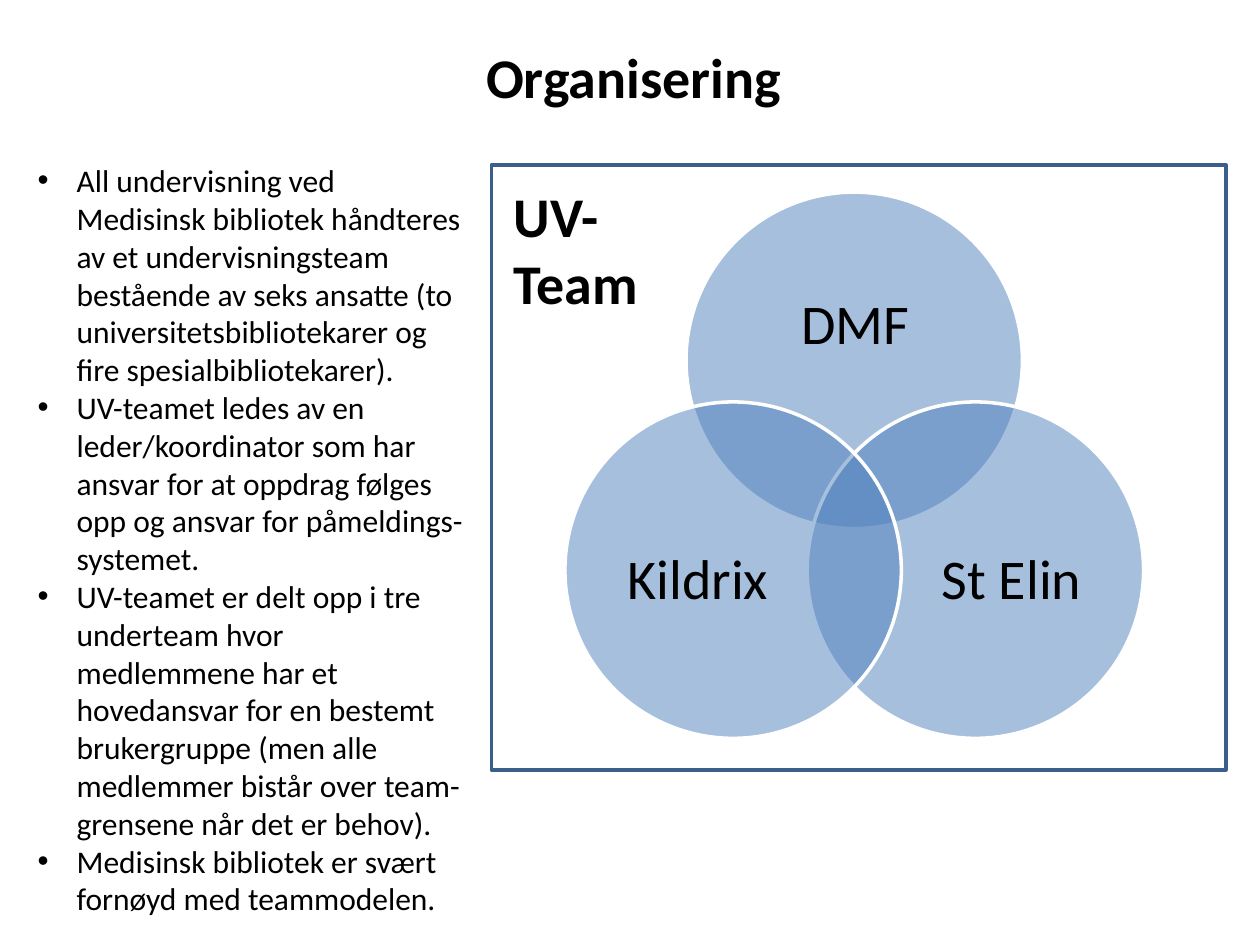
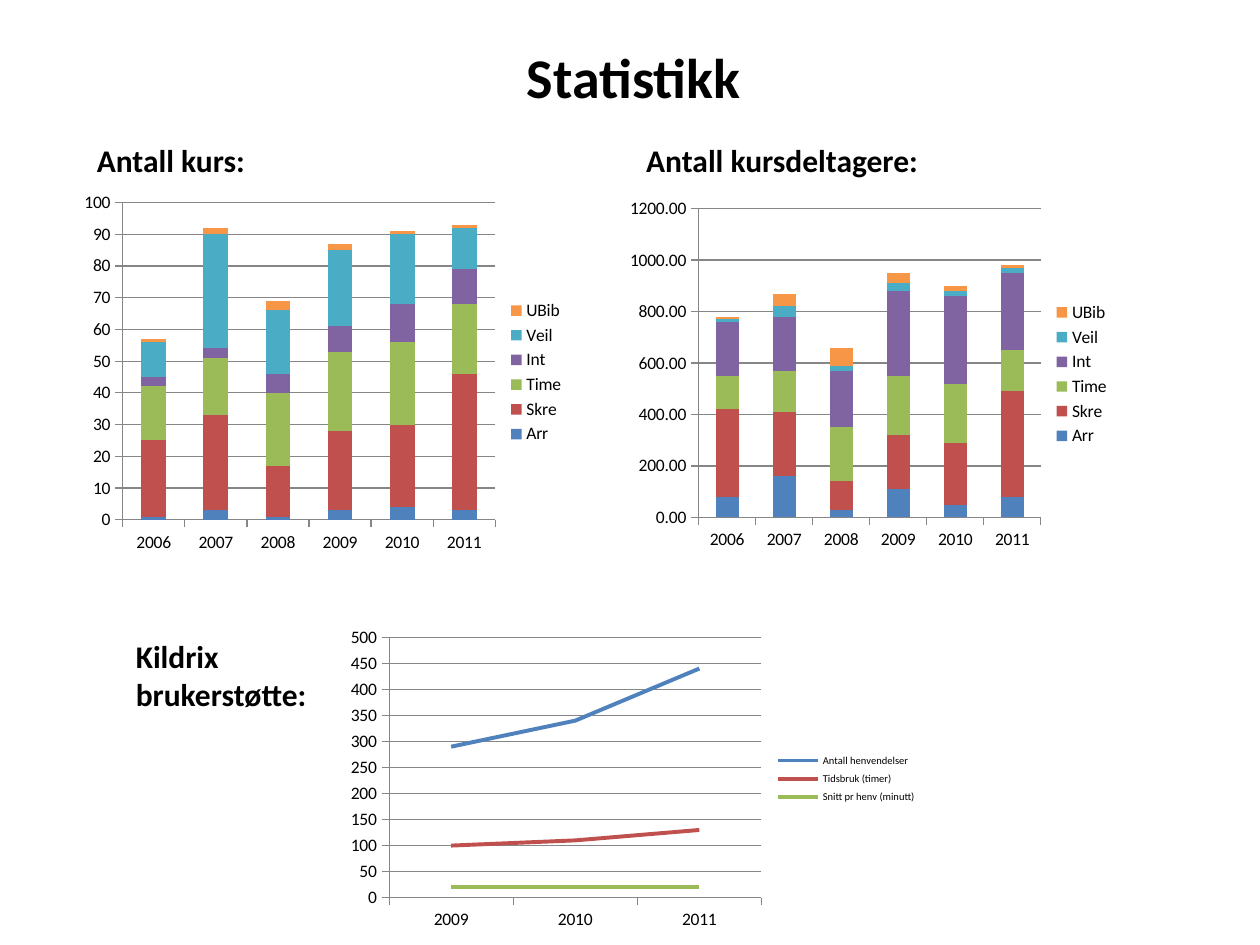
from math import cos, radians, sin

from lxml.etree import SubElement
from pptx import Presentation
from pptx.chart.data import CategoryChartData
from pptx.dml.color import RGBColor
from pptx.enum.chart import XL_CHART_TYPE, XL_LEGEND_POSITION, XL_TICK_MARK
from pptx.enum.shapes import MSO_SHAPE
from pptx.enum.text import MSO_ANCHOR, MSO_AUTO_SIZE, PP_ALIGN
from pptx.oxml.ns import qn
from pptx.util import Inches, Pt

COLORS = {
    "text": "000000",
    "white": "FFFFFF",
    "frame": "3A5F8C",
    "grid": "868686",
    "blue": "4F81BD",
    "red": "C0504D",
    "green": "9BBB59",
    "purple": "8064A2",
    "teal": "4BACC6",
    "orange": "F79646",
}
SERIES = ["blue", "red", "green", "purple", "teal", "orange"]
FONT = "Calibri"


def color(name):
    return RGBColor.from_string(COLORS[name])


def inches(box):
    return [Inches(side) for side in box]


class Deck:
    def __init__(self):
        self.deck = Presentation()
        self.deck.slide_width = Inches(10)
        self.deck.slide_height = Inches(7.5)

    def start(self, title):
        self.slide = self.deck.slides.add_slide(self.deck.slide_layouts[6])
        self.text((0.06, 0.29, 9.94, 0.64), title, 32, True, PP_ALIGN.CENTER)

    def text(self, box, words, size, bold=False, align=PP_ALIGN.LEFT):
        frame = self.slide.shapes.add_textbox(*inches(box)).text_frame
        frame.word_wrap = True
        frame.auto_size = MSO_AUTO_SIZE.SHAPE_TO_FIT_TEXT
        frame.text = words
        for para in frame.paragraphs:
            para.alignment = align
            for run in para.runs:
                self.style(run.font, size, bold)
        return frame

    def style(self, font, size, bold=False):
        font.name = FONT
        font.size = Pt(size)
        font.bold = bold
        font.color.rgb = color("text")

    def label(self, box, words):
        frame = self.text(box, words, 32, align=PP_ALIGN.CENTER)
        frame.auto_size = MSO_AUTO_SIZE.NONE
        frame.vertical_anchor = MSO_ANCHOR.MIDDLE
        frame.margin_left = frame.margin_right = 0
        frame.margin_top = frame.margin_bottom = 0
        frame.paragraphs[0].line_spacing = 0.9

    def bullets(self, box, items):
        frame = self.text(box, "\n".join(items), 18)
        for para in frame.paragraphs:
            props = para._p.get_or_add_pPr()
            props.set("marL", str(Inches(0.31)))
            props.set("indent", str(Inches(-0.31)))
            SubElement(props, qn("a:buFont")).set("typeface", "Arial")
            SubElement(props, qn("a:buChar")).set("char", "•")

    def shape(self, kind, box, line, fill=None):
        shape = self.slide.shapes.add_shape(kind, *inches(box))
        shape.shadow.inherit = False
        shape.line.color.rgb = color(line)
        shape.line.width = Pt(2)
        if fill:
            shape.fill.solid()
            shape.fill.fore_color.rgb = color(fill)
            tint = shape.fill._xPr.find(".//" + qn("a:srgbClr"))
            SubElement(tint, qn("a:alpha")).set("val", "50000")
        else:
            shape.fill.background()

    def chart(self, kind, box, years, rows, top, step, form="General"):
        data = CategoryChartData(number_format=form)
        data.categories = years
        for name, values in rows.items():
            data.add_series(name, values)
        chart = self.slide.shapes.add_chart(kind, *inches(box), data).chart
        self.style(chart.font, 10)
        chart.has_title = False
        chart.has_legend = True
        chart.legend.position = XL_LEGEND_POSITION.RIGHT
        chart.legend.include_in_layout = False
        for axis in (chart.category_axis, chart.value_axis):
            axis.major_tick_mark = XL_TICK_MARK.OUTSIDE
            axis.minor_tick_mark = XL_TICK_MARK.NONE
            self.rule(axis.format.line)
        axis.minimum_scale, axis.maximum_scale = 0, top
        axis.major_unit = step
        axis.has_major_gridlines = True
        self.rule(axis.major_gridlines.format.line)
        axis.tick_labels.number_format = form
        axis.tick_labels.number_format_is_linked = False
        chart.plots[0].vary_by_categories = False
        return chart

    def rule(self, line):
        line.color.rgb = color("grid")
        line.width = Pt(0.75)

    def columns(self, box, years, rows, top, step, form="General"):
        kind = XL_CHART_TYPE.COLUMN_STACKED
        chart = self.chart(kind, box, years, rows, top, step, form)
        plot = chart.plots[0]
        plot.gap_width, plot.overlap = 150, 100
        for series, name in zip(plot.series, SERIES):
            series.format.fill.solid()
            series.format.fill.fore_color.rgb = color(name)

    def lines(self, box, years, rows, top, step):
        chart = self.chart(XL_CHART_TYPE.LINE, box, years, rows, top, step)
        self.style(chart.legend.font, 6)
        for series, name in zip(chart.plots[0].series, SERIES):
            series.smooth = False
            series.format.line.color.rgb = color(name)
            series.format.line.width = Pt(2.25)


def team(deck):
    deck.start("Organisering")
    labels = {
        "DMF": (5.81, 1.99, 1.96, 1.2),
        "St Elin": (7.23, 3.88, 1.6, 1.47),
        "Kildrix": (4.74, 3.88, 1.6, 1.47),
    }
    size, reach, mid_x, mid_y = 2.67, 1.11, 6.78, 3.97
    for turn, (name, box) in enumerate(labels.items()):
        angle = radians(120 * turn)
        left = mid_x + reach * sin(angle) - size / 2
        top = mid_y - reach * cos(angle) - size / 2
        deck.shape(MSO_SHAPE.OVAL, (left, top, size, size), "white", "blue")
        deck.label(box, name)
    deck.shape(MSO_SHAPE.RECTANGLE, (3.9, 1.31, 5.83, 4.8), "frame")
    deck.text((3.98, 1.39, 1.34, 1.18), "UV-Team", 32, True)
    deck.bullets((0.2, 1.23, 3.62, 6.16), [
        "All undervisning ved Medisinsk bibliotek håndteres av et "
        "undervisningsteam bestående av seks ansatte (to "
        "universitetsbibliotekarer og fire spesialbibliotekarer).",
        "UV-teamet ledes av en leder/koordinator som har ansvar for at "
        "oppdrag følges opp og ansvar for påmeldings-systemet.",
        "UV-teamet er delt opp i tre underteam hvor medlemmene har et "
        "hovedansvar for en bestemt brukergruppe (men alle medlemmer "
        "bistår over team-grensene når det er behov).",
        "Medisinsk bibliotek er svært fornøyd med teammodelen.",
    ])


def stats(deck):
    deck.start("Statistikk")
    years = [str(year) for year in range(2006, 2012)]
    deck.columns((0.59, 1.47, 3.99, 2.97), years, {
        "Arr": (1, 3, 1, 3, 4, 3),
        "Skre": (24, 30, 16, 25, 26, 43),
        "Time": (17, 18, 23, 25, 26, 22),
        "Int": (3, 3, 6, 8, 12, 11),
        "Veil": (11, 36, 20, 24, 22, 13),
        "UBib": (1, 2, 3, 2, 1, 1),
    }, 100, 10)
    deck.columns((4.92, 1.52, 3.99, 2.9), years, {
        "Arr": (80, 160, 30, 110, 50, 80),
        "Skre": (340, 250, 110, 210, 240, 410),
        "Time": (130, 160, 210, 230, 230, 160),
        "Int": (210, 210, 220, 330, 340, 300),
        "Veil": (10, 40, 20, 30, 20, 20),
        "UBib": (10, 50, 70, 40, 20, 10),
    }, 1200, 200, "0.00")
    deck.lines((2.69, 4.93, 4.69, 2.5), years[3:], {
        "Antall henvendelser": (290, 340, 440),
        "Tidsbruk (timer)": (100, 110, 130),
        "Snitt pr henv (minutt)": (20, 20, 20),
    }, 500, 50)
    heads = {
        "Antall kurs:": (0.67, 1.07, 1.46, 0.4),
        "Antall kursdeltagere:": (5.03, 1.07, 2.99, 0.4),
        "Kildrix brukerstøtte:": (0.98, 5.01, 1.57, 0.71),
    }
    for words, box in heads.items():
        deck.text(box, words, 18, True)


def main():
    deck = Deck()
    team(deck)
    stats(deck)
    deck.deck.save("out.pptx")


if __name__ == "__main__":
    main()
